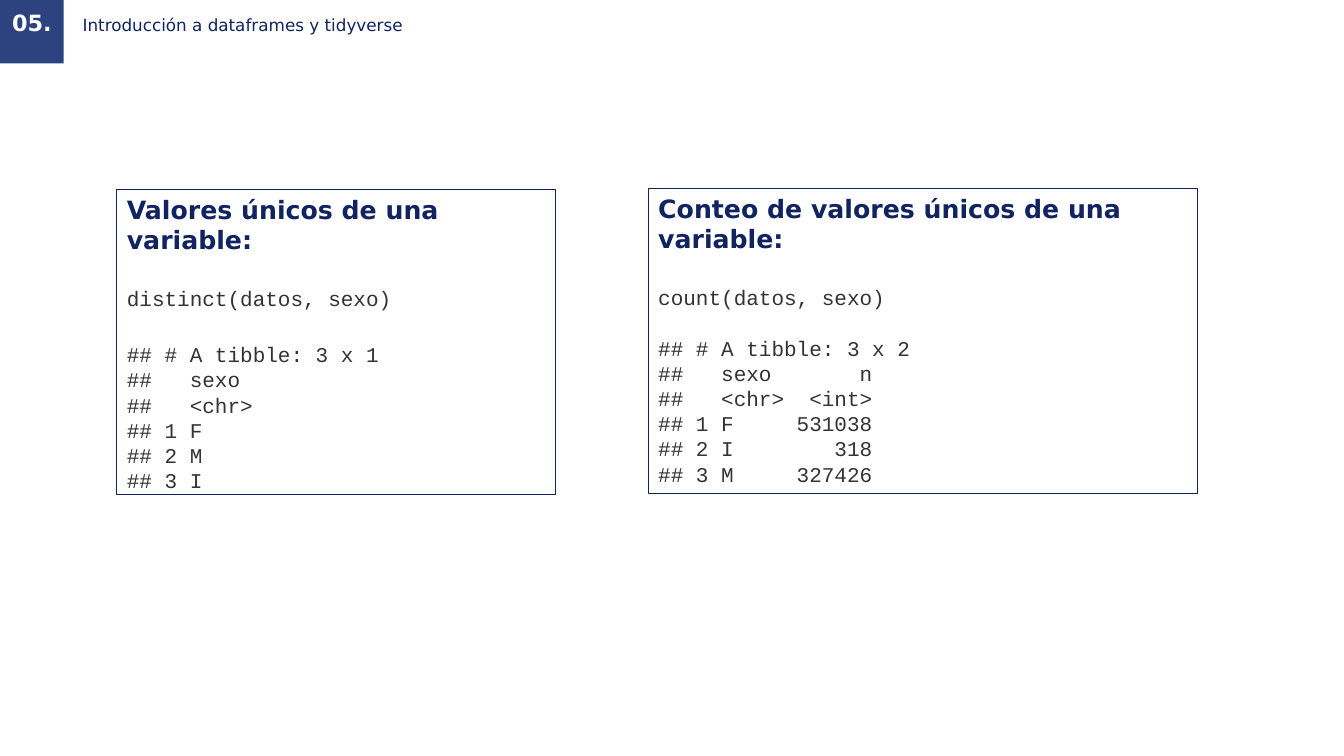
"""Build a slide showing distinct values and value counts of a data frame column."""
from pptx import Presentation
from pptx import util as u
from pptx.dml.color import RGBColor
from pptx.enum import shapes, text

WIDTH, HEIGHT = u.Inches(13.33), u.Inches(7.5)
NAVY = RGBColor(0x12, 0x23, 0x61)
BLUE = RGBColor(0x2C, 0x43, 0x7F)
GRAY = RGBColor(0x33, 0x33, 0x33)
WHITE = RGBColor(0xFF, 0xFF, 0xFF)
SANS, MONO = "DejaVu Sans", "Courier New"
COLUMN, ROW = WIDTH / 100, HEIGHT / 100

DISTINCT_OUTPUT = """## # A tibble: 3 x 1
##   sexo
##   <chr>
## 1 F
## 2 M
## 3 I"""
COUNT_OUTPUT = """## # A tibble: 3 x 2
##   sexo       n
##   <chr>  <int>
## 1 F     531038
## 2 I        318
## 3 M     327426"""


def place(columns, rows, width, height):
    """Turn grid units into a left, top, width and height."""
    return [round(length) for length in
            (columns * COLUMN, rows * ROW, width * COLUMN, height * ROW)]


def style(para, name, size, color, bold=False):
    """Set the font of a whole paragraph."""
    font = para.font
    font.name, font.size, font.bold = name, u.Pt(size), bold
    font.color.rgb = color


def add_rectangle(page, area):
    """Add a rectangle without shadow, its text starting at the top left."""
    box = page.shapes.add_shape(shapes.MSO_SHAPE.RECTANGLE, *area)
    box.shadow.inherit = False
    box.text_frame.word_wrap = True
    box.text_frame.vertical_anchor = text.MSO_ANCHOR.TOP
    box.text_frame.paragraphs[0].alignment = text.PP_ALIGN.LEFT
    return box


def add_section_number(page, number):
    """Add the filled square with the section number."""
    box = add_rectangle(page, place(0, 0, 4.75, 8.4))
    box.fill.solid()
    box.fill.fore_color.rgb = BLUE
    box.line.fill.background()
    frame = box.text_frame
    frame.margin_left = frame.margin_right = 0
    frame.margin_top = round(1.6 * ROW)
    para = frame.paragraphs[0]
    para.text, para.alignment = number, text.PP_ALIGN.CENTER
    para.line_spacing = 0.9
    style(para, SANS, 16, WHITE, bold=True)


def set_title(page, wording):
    """Move and format the title placeholder."""
    title = page.shapes.title
    title.left, title.top, title.width, title.height = place(6.15, -0.1, 89.35, 7.2)
    frame = title.text_frame
    frame.margin_left = 0
    frame.vertical_anchor = text.MSO_ANCHOR.MIDDLE
    para = frame.paragraphs[0]
    para.text, para.alignment = wording, text.PP_ALIGN.LEFT
    para.line_spacing = 0.9
    style(para, SANS, 12, NAVY)


def add_code_box(page, area, heading, call, output, output_gap):
    """Add an outlined box with a heading, a call and its printed output."""
    box = add_rectangle(page, area)
    box.fill.background()
    box.line.color.rgb = NAVY
    box.line.width = u.Pt(0.75)
    para = box.text_frame.paragraphs[0]
    para.text = heading
    style(para, SANS, 18, NAVY, bold=True)
    gaps = {0: 22, 1: output_gap}
    for index, line in enumerate([call, *output.splitlines()]):
        para = box.text_frame.add_paragraph()
        para.text, para.alignment = line, text.PP_ALIGN.LEFT
        para.line_spacing = u.Pt(18)
        para.space_before = u.Pt(gaps.get(index, 0))
        style(para, MONO, 15, GRAY)


def main():
    """Create and save the deck."""
    deck = Presentation()
    deck.slide_width, deck.slide_height = WIDTH, HEIGHT
    page = deck.slides.add_slide(deck.slide_layouts[5])
    add_section_number(page, "05.")
    set_title(page, "Introducción a dataframes y tidyverse")
    add_code_box(page, place(8.7, 25.07, 32.65, 40.4), "Valores únicos de una variable:",
                 "distinct(datos, sexo)", DISTINCT_OUTPUT, 22)
    add_code_box(page, place(48.24, 24.93, 40.9, 40.4),
                 "Conteo de valores únicos de una variable:",
                 "count(datos, sexo)", COUNT_OUTPUT, 18)
    deck.save("out.pptx")


if __name__ == "__main__":
    main()
